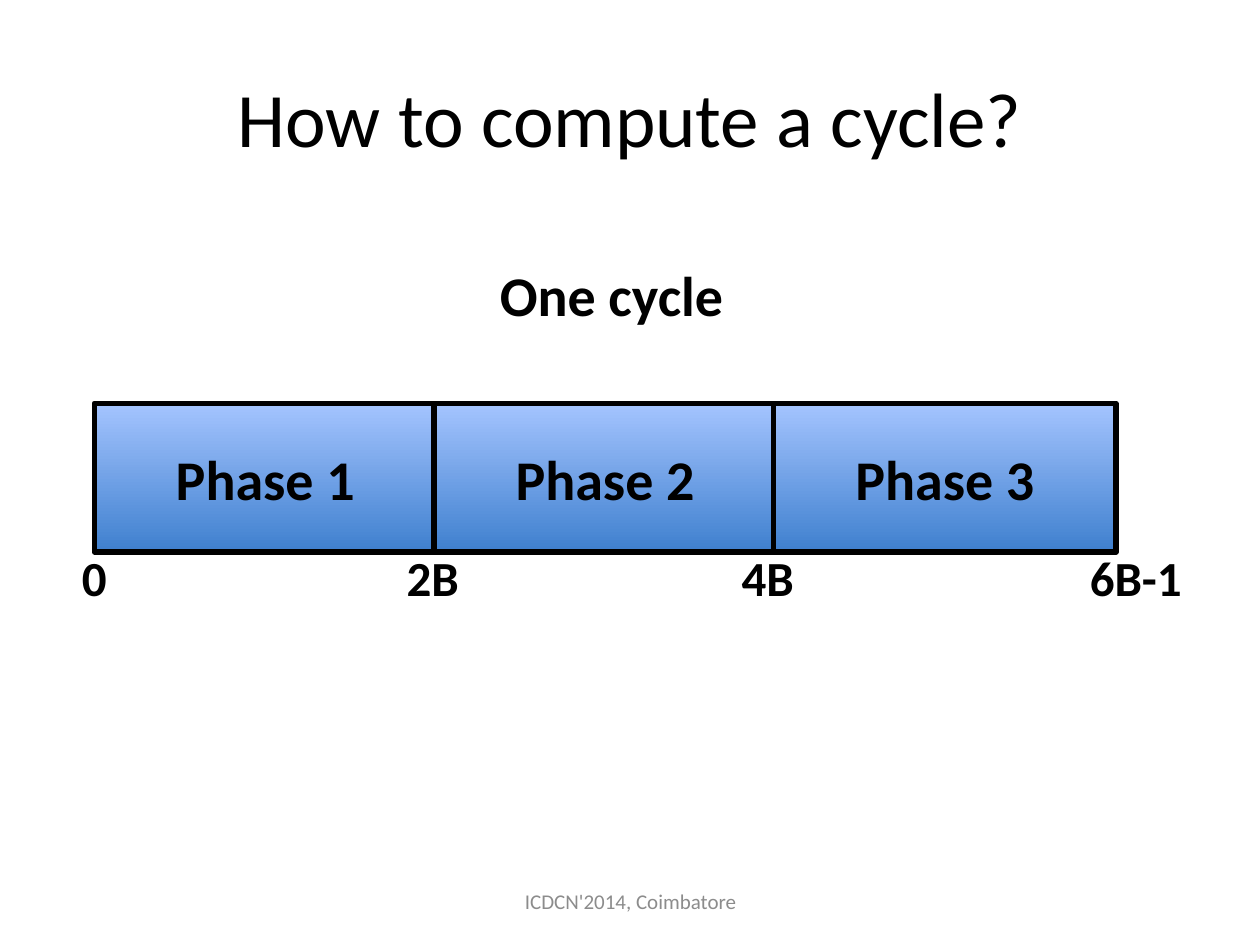
import pptx
import pptx.util
import pptx.dml.color
import pptx.enum.shapes
import pptx.enum.text
from pptx.util import Cm, Pt

TITLE = "How to compute a cycle?"
PHASES = ["Phase 1", "Phase 2", "Phase 3"]
# text, left, width (cm)
MARKS = [("0", 1.4, 1.02), ("2B", 7.95, 1.57), ("4B", 14.7, 1.57), ("6B-1", 21.72, 2.39)]
LEFT, TOP, WIDTH, HEIGHT, STEP = 1.9, 8.13, 6.9, 3, 6.85

ALIGN = pptx.enum.text.PP_ALIGN
ANCHOR = pptx.enum.text.MSO_ANCHOR


def color(code):
    return pptx.dml.color.RGBColor.from_string(code)


def write(shape, text, size, code="000000", bold=False, align=ALIGN.CENTER,
          anchor=ANCHOR.MIDDLE, wrap=True):
    frame = shape.text_frame
    frame.text = text
    frame.word_wrap = wrap
    frame.vertical_anchor = anchor
    line = frame.paragraphs[0]
    line.alignment = align
    line.font.name = "Calibri"
    line.font.size = Pt(size)
    line.font.bold = bold
    line.font.color.rgb = color(code)


def add_text(slide, box, *args, **style):
    write(slide.shapes.add_textbox(*map(Cm, box)), *args, **style)


def add_phase(slide, text, left):
    box = slide.shapes.add_shape(pptx.enum.shapes.MSO_SHAPE.RECTANGLE,
                                 Cm(left), Cm(TOP), Cm(WIDTH), Cm(HEIGHT))
    box.shadow.inherit = False
    box.fill.gradient()
    box.fill.gradient_angle = 90
    for stop, place, code in zip(box.fill.gradient_stops, (0, 1), ("3F80CE", "A4C4FF")):
        stop.position = place
        stop.color.rgb = color(code)
    box.line.color.rgb = color("000000")
    box.line.width = Pt(3)
    write(box, text, 32, bold=True)


def main():
    deck = pptx.Presentation()
    deck.slide_width, deck.slide_height = Cm(25.4), Cm(19.05)
    slide = deck.slides.add_slide(deck.slide_layouts[5])

    title = slide.shapes.title
    title.left, title.top, title.width, title.height = map(Cm, (1.27, 0.76, 22.86, 3.18))
    write(title, TITLE, 44)
    add_text(slide, (8.69, 17.65, 8.05, 1.02), "ICDCN'2014, Coimbatore", 12, "8C8C8C")

    for i, name in enumerate(PHASES):
        add_phase(slide, name, LEFT + i * STEP)
    for text, left, width in MARKS:
        add_text(slide, (left, 10.92, width, 1.45), text, 28, bold=True,
                 align=ALIGN.LEFT, anchor=ANCHOR.TOP, wrap=False)
    add_text(slide, (7.95, 5.13, 8.76, 1.63), "One cycle", 32, bold=True, anchor=ANCHOR.TOP)

    deck.save("out.pptx")


if __name__ == "__main__":
    main()
